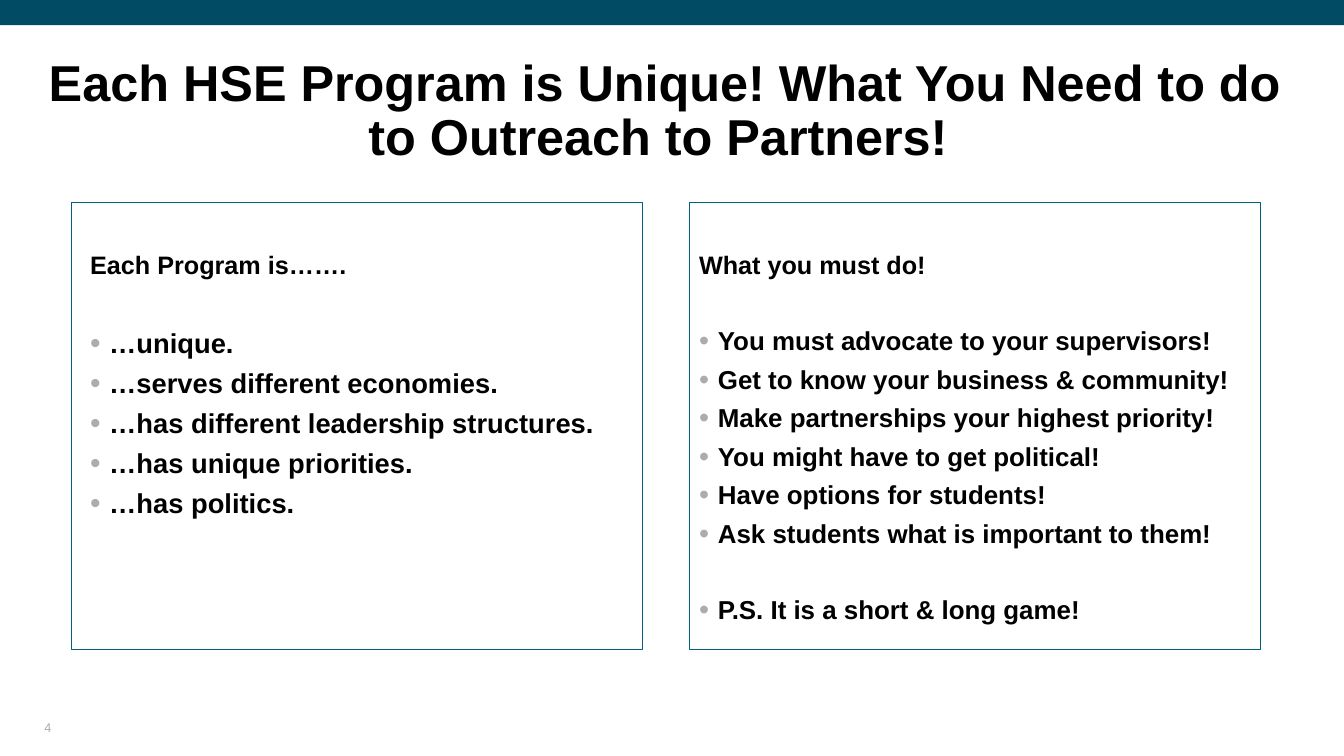
from dataclasses import dataclass

from lxml import etree
from pptx import Presentation
from pptx.dml.color import RGBColor
from pptx.enum.shapes import MSO_SHAPE
from pptx.enum.text import MSO_ANCHOR, PP_ALIGN
from pptx.oxml.ns import qn
from pptx.util import Pt

RECTANGLE = MSO_SHAPE.RECTANGLE
TOP, BOTTOM = MSO_ANCHOR.TOP, MSO_ANCHOR.BOTTOM
LEFT, CENTER = PP_ALIGN.LEFT, PP_ALIGN.CENTER


@dataclass(frozen=True)
class Theme:
    font: str = "Arial"
    band: RGBColor = RGBColor(0x01, 0x4B, 0x64)
    border: RGBColor = RGBColor(0x00, 0x61, 0x7D)
    ink: RGBColor = RGBColor(0, 0, 0)
    muted: RGBColor = RGBColor(0xAF, 0xAB, 0xAB)
    title_size: float = 36
    heading_size: float = 18
    traits_size: float = 19.5
    actions_size: float = 18.5
    page_size: float = 9
    line_spacing: float = 0.9
    space_before: float = 7.5
    bullet_indent: float = 13.5


THEME = Theme()

# Slide and panel layout, in points
SLIDE_WIDTH, SLIDE_HEIGHT = 960, 540
MARGIN = 31.68
PANEL_LEFT, PANEL_TOP = 50.9, 144.5
PANEL_WIDTH, PANEL_HEIGHT, PANEL_GAP = 408, 319.2, 33.3

PROGRAM_TRAITS = [
    ["…unique.", "…serves different economies.", "…has different leadership structures.",
     "…has unique priorities.", "…has politics."],
]
ACTIONS = [
    ["You must advocate to your supervisors!", "Get to know your business & community!",
     "Make partnerships your highest priority!", "You might have to get political!",
     "Have options for students!", "Ask students what is important to them!"],
    ["P.S. It is a short & long game!"],
]


def set_frame(frame, anchor, insets=(0, 0, 0, 0)):
    frame.word_wrap = True
    frame.vertical_anchor = anchor
    (frame.margin_left, frame.margin_top,
     frame.margin_right, frame.margin_bottom) = map(Pt, insets)


def format_paragraph(paragraph, size, color, bold=True, align=LEFT):
    paragraph.alignment = align
    paragraph.line_spacing = THEME.line_spacing
    for run in paragraph.runs:
        run.font.name = THEME.font
        run.font.size = Pt(size)
        run.font.bold = bold
        run.font.color.rgb = color


def add_bullet(paragraph):
    properties = paragraph._p.get_or_add_pPr()
    indent = Pt(THEME.bullet_indent)
    properties.set("marL", str(indent))
    properties.set("indent", str(-indent))
    color = etree.SubElement(properties, qn("a:buClr"))
    etree.SubElement(color, qn("a:srgbClr"), val=str(THEME.muted))
    etree.SubElement(properties, qn("a:buSzPct"), val="110000")
    etree.SubElement(properties, qn("a:buFont"), typeface=THEME.font)
    etree.SubElement(properties, qn("a:buChar"), char="•")


def add_rectangle(slide, left, top, width, height):
    rectangle = slide.shapes.add_shape(RECTANGLE, Pt(left), Pt(top), Pt(width), Pt(height))
    rectangle.shadow.inherit = False
    return rectangle


def add_band(slide):
    band = add_rectangle(slide, 0, 0, SLIDE_WIDTH, 18)
    band.fill.solid()
    band.fill.fore_color.rgb = THEME.band
    band.line.fill.background()


def add_label(slide, text, box, size, color, bold, align, anchor):
    label = slide.shapes.add_textbox(*map(Pt, box))
    frame = label.text_frame
    set_frame(frame, anchor)
    frame.text = text
    format_paragraph(frame.paragraphs[0], size, color, bold, align)


def add_panel(slide, column, heading, groups, size, side_inset, group_gap):
    left = PANEL_LEFT + column * (PANEL_WIDTH + PANEL_GAP)
    panel = add_rectangle(slide, left, PANEL_TOP, PANEL_WIDTH, PANEL_HEIGHT)
    panel.fill.background()
    panel.line.color.rgb = THEME.border
    panel.line.width = Pt(0.75)

    frame = panel.text_frame
    set_frame(frame, TOP, (side_inset, 36, side_inset, 3.6))
    frame.text = heading
    format_paragraph(frame.paragraphs[0], THEME.heading_size, THEME.ink)

    # A wider gap opens each group of bullets
    for group in groups:
        for position, item in enumerate(group):
            paragraph = frame.add_paragraph()
            paragraph.text = item
            add_bullet(paragraph)
            format_paragraph(paragraph, size, THEME.ink)
            paragraph.space_before = Pt(THEME.space_before if position else group_gap)


def main():
    presentation = Presentation()
    presentation.slide_width = Pt(SLIDE_WIDTH)
    presentation.slide_height = Pt(SLIDE_HEIGHT)
    slide = presentation.slides.add_slide(presentation.slide_layouts[6])

    # Top band and title
    add_band(slide)
    add_label(slide, "Each HSE Program is Unique! What You Need to do to Outreach to Partners! ",
              (MARGIN, 41.3, 887, 91.4), THEME.title_size, THEME.ink, True, CENTER, TOP)

    # Two panels
    add_panel(slide, 0, "Each Program is…….", PROGRAM_TRAITS, THEME.traits_size, 13.5, 35.6)
    add_panel(slide, 1, "What you must do!", ACTIONS, THEME.actions_size, 7.2, 34.5)

    # Page number
    add_label(slide, "4", (MARGIN, 507.6, 216, 17.3),
              THEME.page_size, THEME.muted, False, LEFT, BOTTOM)

    presentation.save("out.pptx")


if __name__ == "__main__":
    main()
